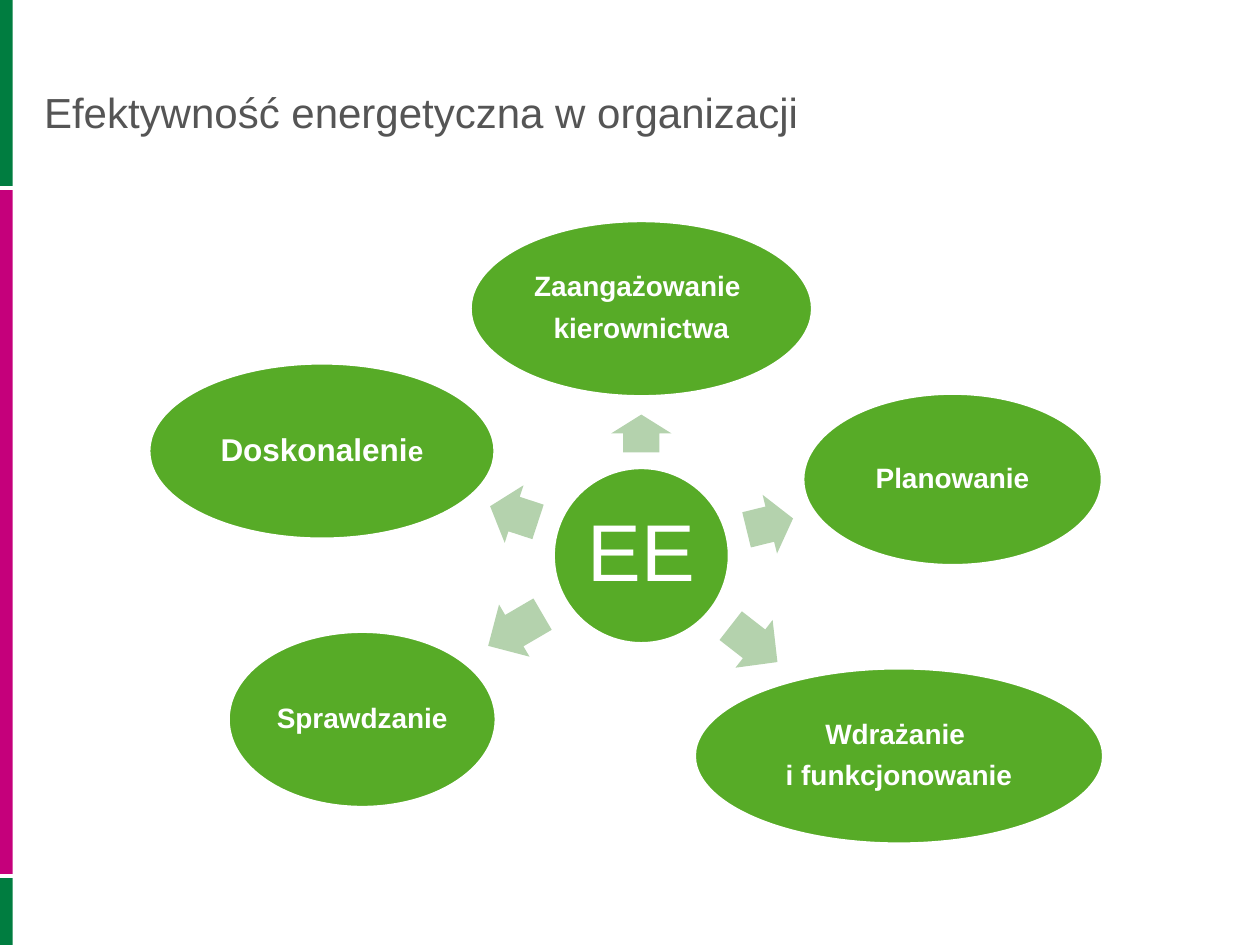
from dataclasses import dataclass
from lxml import etree
from pptx import Presentation, util as u
from pptx.dml.color import RGBColor
from pptx.enum import shapes, text
from pptx.oxml.ns import qn


@dataclass
class Theme:
    font: str = "Arial"
    title: str = "555555"
    white: str = "FFFFFF"
    dark_green: str = "007D40"
    magenta: str = "C5007B"
    green: str = "57AB27"
    pale_green: str = "B4D2AD"
    title_size: int = 24
    hub_size: int = 46
    large_size: int = 18
    label_size: int = 16


theme = Theme()


def add_filled(kind, box, color):
    sp = s.shapes.add_shape(kind, *map(u.Inches, box))
    sp.shadow.inherit = False
    sp.fill.solid()
    sp.fill.fore_color.rgb = RGBColor.from_string(color)
    sp.line.fill.background()
    return sp


def add_run(p, words, size, color, bold=False):
    r = p.add_run()
    r.text = words
    r.font.name = theme.font
    r.font.size = u.Pt(size)
    r.font.bold = bold
    r.font.color.rgb = RGBColor.from_string(color)


prs = Presentation()
prs.slide_width, prs.slide_height = u.Inches(10), u.Inches(7.5)
s = prs.slides.add_slide(prs.slide_layouts[5])

title = s.shapes.title
title.left, title.top = u.Inches(0.35), u.Inches(0.6)
title.width, title.height = u.Inches(8.03), u.Inches(0.63)
tf = title.text_frame
tf.word_wrap = True
tf.auto_size = text.MSO_AUTO_SIZE.NONE
tf.vertical_anchor = text.MSO_ANCHOR.MIDDLE
tf.margin_left = tf.margin_right = tf.margin_top = tf.margin_bottom = 0
p = tf.paragraphs[0]
p.alignment = text.PP_ALIGN.LEFT
p.line_spacing = 0.9
add_run(p, "Efektywność energetyczna w organizacji", theme.title_size, theme.title)

for top, height, color in [
    (0, 1.49, theme.dark_green),
    (1.51, 5.43, theme.magenta),
    (6.95, 0.55, theme.dark_green),
]:
    add_filled(shapes.MSO_SHAPE.RECTANGLE, (0, top, 0.1, height), color)

for y in (1.49, 6.95):
    line = s.shapes.add_connector(
        shapes.MSO_CONNECTOR.STRAIGHT, 0, u.Inches(y), prs.slide_width, u.Inches(y)
    )
    line.line.color.rgb = RGBColor.from_string(theme.white)
    line.line.width = u.Pt(2.25)
    etree.SubElement(line._element.spPr, qn("a:effectLst"))

for left, top, length, angle in [
    (4.94, 3.2, 0.3, 270),
    (5.92, 3.92, 0.38, 346.2),
    (5.75, 4.87, 0.47, 37.9),
    (3.84, 4.76, 0.5, 149.7),
    (3.88, 3.84, 0.4, 198.1),
]:
    arrow = add_filled(
        shapes.MSO_SHAPE.RIGHT_ARROW, (left, top, length, 0.48), theme.pale_green
    )
    arrow.adjustments[0], arrow.adjustments[1] = 0.6, 0.5
    arrow.rotation = angle

label = theme.label_size
ellipses = [
    ((4.39, 3.71, 1.4, 1.4), 0.06, False, [[("EE", theme.hub_size)]]),
    ((3.73, 1.75, 2.72, 1.4), 0.02, True,
     [[("Zaangażowanie ", label)], [("kierownictwa", label)]]),
    ((6.37, 3.12, 2.38, 1.37), 0.02, True, [[("Planowanie", label)]]),
    ((5.51, 5.3, 3.25, 1.4), 0.02, True,
     [[("Wdrażanie ", label)], [("i funkcjonowanie", label)]]),
    ((1.81, 5.01, 2.13, 1.4), 0.02, True, [[("Sprawdzanie", label)]]),
    ((1.18, 2.88, 2.75, 1.4), 0.03, True,
     [[("Doskonaleni", theme.large_size), ("e", label)]]),
]
for box, margin, bold, paragraphs in ellipses:
    sp = add_filled(shapes.MSO_SHAPE.OVAL, box, theme.green)
    sp.line.color.rgb = RGBColor.from_string(theme.white)
    sp.line.width = u.Pt(2)
    tf = sp.text_frame
    tf.word_wrap = True
    tf.vertical_anchor = text.MSO_ANCHOR.MIDDLE
    tf.margin_left = tf.margin_right = u.Inches(margin)
    tf.margin_top = tf.margin_bottom = u.Inches(margin)
    for i, runs in enumerate(paragraphs):
        p = tf.add_paragraph() if i else tf.paragraphs[0]
        p.alignment = text.PP_ALIGN.CENTER
        p.line_spacing = 0.9
        if i:
            p.space_before = u.Pt(6.5)
        for words, size in runs:
            add_run(p, words, size, theme.white, bold)

prs.save("out.pptx")
